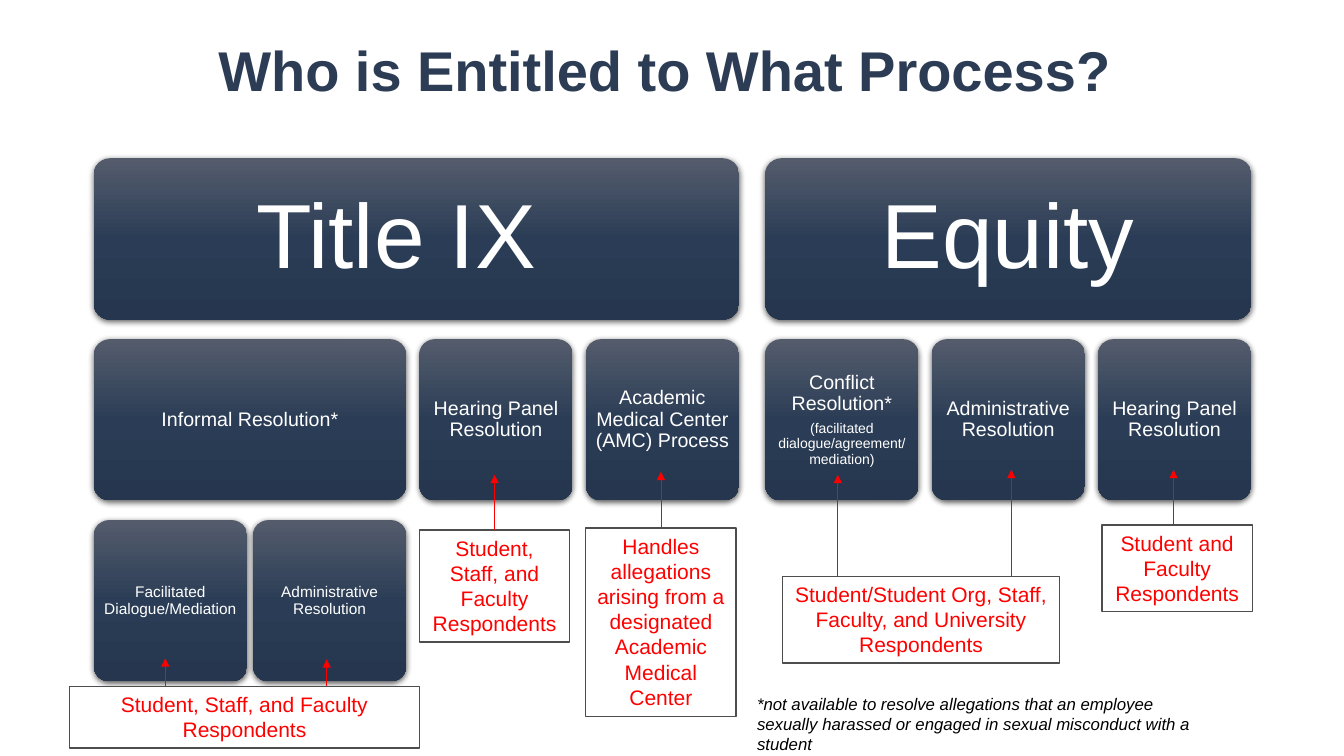
"""Build the slide that shows who is entitled to what process."""
from dataclasses import dataclass

from lxml import etree
from pptx import Presentation
from pptx.dml.color import RGBColor
from pptx.enum.shapes import MSO_CONNECTOR, MSO_SHAPE
from pptx.enum.text import MSO_ANCHOR, MSO_AUTO_SIZE, PP_ALIGN
from pptx.oxml import parse_xml
from pptx.oxml.ns import nsdecls, qn
from pptx.util import Inches, Pt

ROUND, RECT = MSO_SHAPE.ROUNDED_RECTANGLE, MSO_SHAPE.RECTANGLE
STRAIGHT = MSO_CONNECTOR.STRAIGHT
TOP, MIDDLE = MSO_ANCHOR.TOP, MSO_ANCHOR.MIDDLE
CENTER, LEFT = PP_ALIGN.CENTER, PP_ALIGN.LEFT
NO_FIT = MSO_AUTO_SIZE.NONE

TITLE = "Who is Entitled to What Process?"
TREE = [
    ("Title IX", "", [
        ("Informal Resolution*", "", [
            ("Facilitated Dialogue/Mediation", "", []),
            ("Administrative Resolution", "", []),
        ]),
        ("Hearing Panel Resolution", "", []),
        ("Academic Medical Center (AMC) Process", "", []),
    ]),
    ("Equity", "", [
        ("Conflict Resolution*", "(facilitated dialogue/agreement/mediation)", []),
        ("Administrative Resolution", "", []),
        ("Hearing Panel Resolution", "", []),
    ]),
]
NOTES = [
    ("Student and Faculty Respondents", (10.93, 5.21, 1.49, 0.86), [(11.64, 4.66)]),
    ("Student/Student Org, Staff, Faculty, and University Respondents",
     (7.76, 5.72, 2.75, 0.86), [(10.03, 4.66), (8.31, 4.71)]),
    ("Handles allegations arising from a designated Academic Medical Center",
     (5.81, 5.24, 1.49, 1.87), [(6.57, 4.68)]),
    ("Student, Staff, and Faculty Respondents", (4.16, 5.26, 1.49, 1.11), [(4.9, 4.71)]),
    ("Student, Staff, and Faculty Respondents", (0.69, 6.81, 3.47, 0.61),
     [(3.24, 6.54), (1.64, 6.53)]),
]
FOOT = ("*not available to resolve allegations that an employee sexually harassed "
        "or engaged in sexual misconduct with a student")


@dataclass(frozen=True)
class Theme:
    """Colours, font and type sizes."""
    font: str = "Arial"
    navy: str = "2C3C54"
    white: str = "FFFFFF"
    red: str = "FF0000"
    gray: str = "4D4D4D"
    black: str = "000000"
    shades: tuple = ((0, "545C6C"), (50, "2B3D56"), (100, "25364E"))
    title: int = 40
    levels: tuple = (65, 14, 11)
    small: int = 10
    note: int = 15
    foot: int = 12


LOOK = Theme()
START, FIRST = 0.93, 1.57
LEAF, TALL, STEP = 1.52, 1.6, 1.795
GAPS = (0.26, 0.13, 0.06)
PADS = (0.27, 0.05, 0.04)
EXTRA = {"Title IX": 0.4}
NEAR = 0.02


def color(code):
    return RGBColor.from_string(code)


def place(area):
    return [Inches(part) for part in area]


def write(frame, lines, shade, align=CENTER, anchor=TOP, space=1.0):
    """Fill a frame with (text, size) lines in one style."""
    frame.word_wrap = True
    frame.auto_size = NO_FIT
    frame.vertical_anchor = anchor
    for spot, (text, size) in enumerate(lines):
        para = frame.add_paragraph() if spot else frame.paragraphs[0]
        para.text = text
        para.alignment = align
        para.line_spacing = space
        para.font.name, para.font.size = LOOK.font, Pt(size)
        para.font.color.rgb = color(shade)


def finish(shape):
    """Give a box its gradient and its drop shadow."""
    stops = "".join(f'<a:gs pos="{at * 1000}"><a:srgbClr val="{code}"/></a:gs>'
                    for at, code in LOOK.shades)
    shape.line.fill.background()
    props = shape._element.spPr
    props.insert(2, parse_xml(
        f'<a:gradFill {nsdecls("a")}><a:gsLst>{stops}</a:gsLst>'
        '<a:lin ang="5400000" scaled="0"/></a:gradFill>'))
    props.append(parse_xml(
        f'<a:effectLst {nsdecls("a")}><a:outerShdw blurRad="{Pt(4.5)}" '
        f'dist="{Pt(1.5)}" dir="5400000" algn="ctr" rotWithShape="0">'
        f'<a:srgbClr val="{LOOK.black}"><a:alpha val="63000"/></a:srgbClr>'
        '</a:outerShdw></a:effectLst>'))


def span(kids, level):
    """Return the width of a row of nodes."""
    if not kids:
        return LEAF
    wide = sum(span(kid[2], level + 1) for kid in kids)
    return wide + GAPS[level] * (len(kids) - 1)


def grow(shapes, nodes, left, level=0):
    """Draw a row of nodes and all rows below it."""
    for text, detail, kids in nodes:
        wide = span(kids, level + 1)
        box = shapes.add_shape(
            ROUND, *place((left, FIRST + STEP * level, wide, TALL)))
        box.adjustments[0] = 0.1
        finish(box)
        frame, pad = box.text_frame, Inches(PADS[level])
        frame.margin_left = frame.margin_top = frame.margin_bottom = pad
        frame.margin_right = pad + Inches(EXTRA.get(text, 0))
        lines = [(text, LOOK.levels[level])]
        if detail:
            lines.append((detail, LOOK.small))
        write(frame, lines, LOOK.white, anchor=MIDDLE, space=0.9)
        if detail:
            frame.paragraphs[0].space_after = Pt(5)
        grow(shapes, kids, left, level + 1)
        left += wide + GAPS[level]


def point(shapes, box, area, x, tip):
    """Draw an arrow from the top of a note up to its tip."""
    left, top, wide, _ = area
    mid = left + wide / 2
    joined = abs(x - mid) < NEAR
    x = mid if joined else x
    arrow = shapes.add_connector(STRAIGHT, *place((x, top, x, tip)))
    if joined:
        arrow.begin_connect(box, 0)
    arrow.line.color.rgb = color(LOOK.red)
    arrow.line.width = Pt(0.5)
    etree.SubElement(arrow.line._get_or_add_ln(), qn("a:tailEnd"), type="triangle")
    etree.SubElement(arrow._element.spPr, qn("a:effectLst"))


def annotate(shapes, text, area, tips):
    """Draw a note and its arrows."""
    box = shapes.add_shape(RECT, *place(area))
    box.shadow.inherit = False
    box.fill.solid()
    box.fill.fore_color.rgb = color(LOOK.white)
    box.line.color.rgb = color(LOOK.gray)
    box.line.width = Pt(1)
    write(box.text_frame, [(text, LOOK.note)], LOOK.red)
    for x, tip in tips:
        point(shapes, box, area, x, tip)


def main():
    deck = Presentation()
    deck.slide_width, deck.slide_height = Inches(13.33), Inches(7.5)
    slide = deck.slides.add_slide(deck.slide_layouts[5])
    shapes = slide.shapes

    head = shapes.title
    head.left, head.top, head.width, head.height = place((0.84, 0.4, 11.5, 0.66))
    write(head.text_frame, [(TITLE, LOOK.title)], LOOK.navy, anchor=MIDDLE, space=0.9)
    head.text_frame.paragraphs[0].font.bold = True

    grow(shapes, TREE, START)
    for text, area, tips in NOTES:
        annotate(shapes, text, area, tips)

    foot = shapes.add_textbox(*place((7.41, 6.83, 4.78, 0.5))).text_frame
    write(foot, [(FOOT, LOOK.foot)], LOOK.black, align=LEFT)
    foot.paragraphs[0].font.italic = True
    deck.save("out.pptx")


if __name__ == "__main__":
    main()
